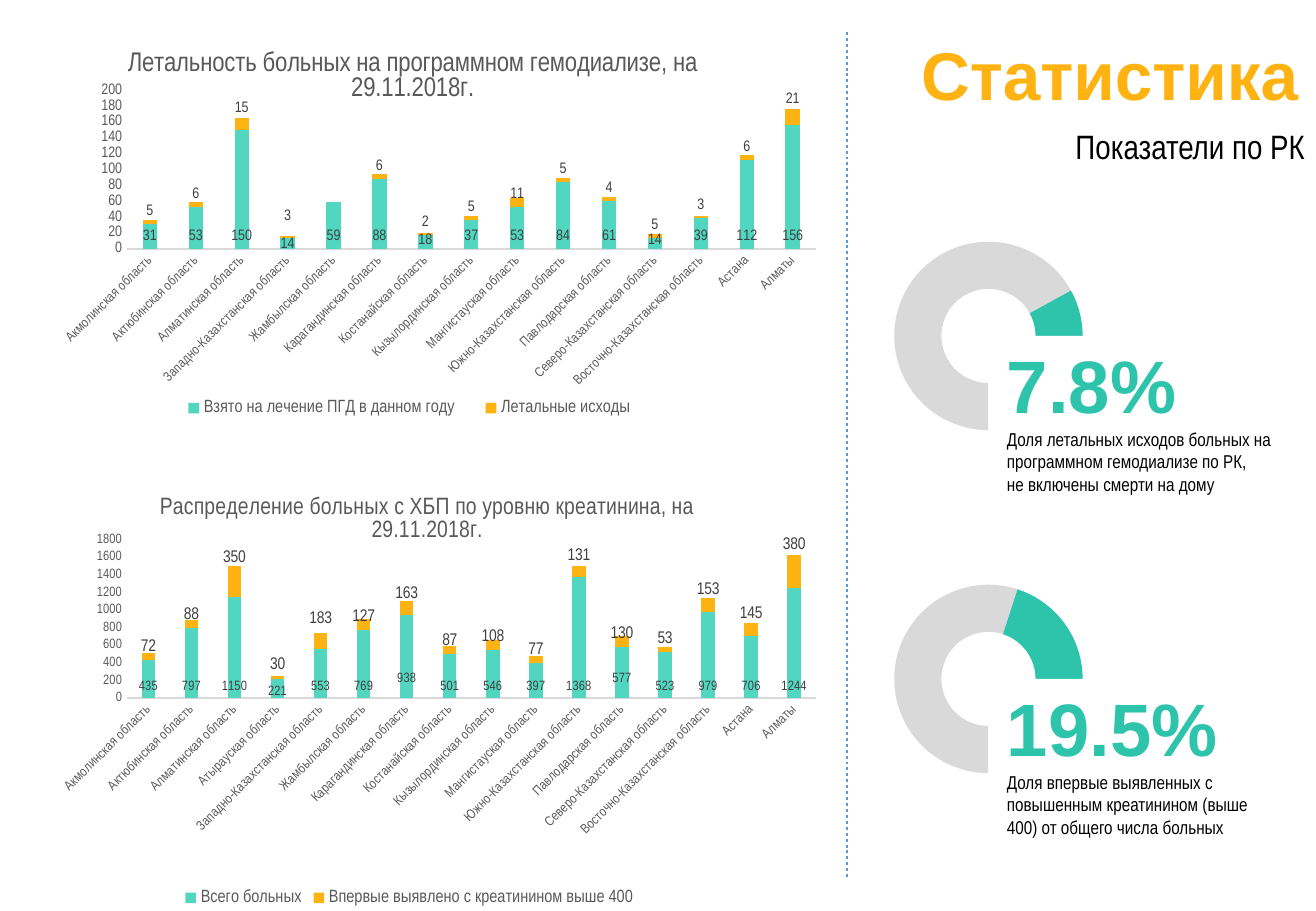
from lxml.etree import SubElement
from pptx import Presentation
from pptx.chart.data import CategoryChartData
from pptx.dml.color import RGBColor
from pptx.enum.chart import XL_CHART_TYPE, XL_LABEL_POSITION, XL_LEGEND_POSITION, XL_TICK_MARK
from pptx.enum.dml import MSO_LINE
from pptx.enum.shapes import MSO_CONNECTOR
from pptx.enum.text import PP_ALIGN
from pptx.oxml import parse_xml
from pptx.oxml.ns import nsdecls, qn
from pptx.util import Pt

PX = 7526
TEAL, MINT, AMBER, GREY = "2EC3AB", "52D6C0", "FFB312", "D9D9D9"
DARK, LABEL, BLACK, WHITE = "595959", "404040", "000000", "FFFFFF"
NARROW = "Arial Narrow"


def rgb(value):
    return RGBColor.from_string(value)


def px(*values):
    return [v * PX for v in values]


class Deck:
    def __init__(self, width, height):
        self.prs = Presentation()
        self.prs.slide_width, self.prs.slide_height = px(width, height)
        self.s = self.prs.slides.add_slide(self.prs.slide_layouts[6])

    def font(self, font, size, color=DARK, name=NARROW, bold=False):
        fmt = {"size": Pt(size), "name": name, "bold": bold}
        for key, value in fmt.items():
            setattr(font, key, value)
        font.color.rgb = rgb(color)

    def layout(self, parent, after=None, **values):
        for old in parent.findall(qn("c:layout")):
            parent.remove(old)
        layout = parse_xml(f"<c:layout {nsdecls('c')}><c:manualLayout/></c:layout>")
        for tag, value in values.items():
            SubElement(layout[0], qn(f"c:{tag}")).set("val", str(value))
        if after is None:
            parent.insert(0, layout)
        else:
            parent.find(qn(after)).addnext(layout)

    def chart(self, kind, box, cats, series):
        data = CategoryChartData()
        data.categories = cats
        for name, values in series:
            data.add_series(name, values)
        chart = self.s.shapes.add_chart(kind, *px(*box), data).chart
        chart.has_legend = chart.has_title = False
        self.font(chart.font, 10, BLACK, "Calibri")
        return chart

    def columns(self, box, title, title_at, title_size, cats, series, axis, legend=None):
        chart = self.chart(XL_CHART_TYPE.COLUMN_STACKED, box, cats,
                           [(name, values) for name, values, *_ in series])
        chart.has_title = chart.has_legend = True
        tf = chart.chart_title.text_frame
        tf.text = title
        self.font(tf.paragraphs[0].runs[0].font, title_size)
        self.layout(chart.chart_title._element, "c:tx",
                    xMode="edge", yMode="edge", x=title_at[0], y=title_at[1])

        chart.legend.position = XL_LEGEND_POSITION.BOTTOM
        chart.legend.include_in_layout = False
        self.font(chart.legend.font, 10.5)
        if legend:
            self.layout(chart.legend._element, "c:legendPos",
                        xMode="edge", yMode="edge", **legend)

        top, step, size = axis
        for ax, tick_size in ((chart.category_axis, 8), (chart.value_axis, size)):
            ax.major_tick_mark = ax.minor_tick_mark = XL_TICK_MARK.NONE
            ax.has_major_gridlines = False
            self.font(ax.tick_labels.font, tick_size)
        line = chart.category_axis.format.line
        line.color.rgb, line.width = rgb(GREY), Pt(0.75)
        turned = chart.category_axis._element.find(qn("c:txPr")).find(qn("a:bodyPr"))
        turned.set("rot", "-2700000")
        turned.set("vert", "horz")
        fmt = {"minimum_scale": 0, "maximum_scale": top, "major_unit": step}
        for key, value in fmt.items():
            setattr(chart.value_axis, key, value)
        chart.value_axis.format.line.fill.background()

        plot = chart.plots[0]
        for key, value in {"gap_width": 219, "overlap": 100, "vary_by_categories": False}.items():
            setattr(plot, key, value)
        self.layout(chart._chartSpace.chart.plotArea, layoutTarget="inner",
                    xMode="edge", yMode="edge", x=0.155, y=0.136, w=0.841, h=0.369)
        for ser, (_, _, color, label_size, shifts) in zip(plot.series, series):
            ser.format.fill.solid()
            ser.format.fill.fore_color.rgb = rgb(color)
            labels = ser.data_labels
            labels.show_value = True
            labels.position = XL_LABEL_POSITION.INSIDE_BASE
            self.font(labels.font, label_size, LABEL)
            for leader in ser._element.xpath("./c:dLbls/c:showLeaderLines"):
                leader.set("val", "0")
            for i, shift in shifts.items():
                label = ser.points[i].data_label
                self.font(label.font, label_size, LABEL)
                label.position = XL_LABEL_POSITION.INSIDE_BASE
                element = ser._element.xpath(f'.//c:dLbl[c:idx/@val="{i}"]')[0]
                self.layout(element, "c:idx", x=0, y=shift)

    def doughnut(self, box, values):
        chart = self.chart(XL_CHART_TYPE.DOUGHNUT, box, "123", [("Series 1", values)])
        plot = chart.plots[0]
        plot.vary_by_categories = True
        for tag, value in (("firstSliceAng", "180"), ("holeSize", "74")):
            plot._element.find(qn(f"c:{tag}")).set("val", value)
        for i, color in enumerate((GREY, TEAL, WHITE)):
            fmt = plot.series[0].points[i].format
            fmt.fill.solid()
            fmt.fill.fore_color.rgb = rgb(color)
            fmt.line.fill.background()

    def text(self, box, paragraphs, align=PP_ALIGN.LEFT):
        tf = self.s.shapes.add_textbox(*px(*box)).text_frame
        tf.word_wrap = True
        for i, (words, *style) in enumerate(paragraphs):
            p = tf.add_paragraph() if i else tf.paragraphs[0]
            p.alignment = align
            r = p.add_run()
            r.text = words
            self.font(r.font, *style)

    def divider(self, x, top, bottom):
        c = self.s.shapes.add_connector(MSO_CONNECTOR.STRAIGHT, *px(x, top, x, bottom))
        c.line.color.rgb = rgb("5B9BD5")
        c.line.width, c.line.dash_style = Pt(1.75), MSO_LINE.ROUND_DOT
        SubElement(c._element.spPr, qn("a:effectLst"))


def main():
    deck = Deck(1316, 911)
    regions = [f"{name} область" for name in (
        "Акмолинская", "Актюбинская", "Алматинская", "Атырауская", "Западно-Казахстанская",
        "Жамбылская", "Карагандинская", "Костанайская", "Кызылординская", "Мангистауская",
        "Южно-Казахстанская", "Павлодарская", "Северо-Казахстанская",
        "Восточно-Казахстанская")] + ["Астана", "Алматы"]
    deck.columns(
        (0, 32, 819, 430), "Летальность больных на программном гемодиализе, на 29.11.2018г.",
        (0.15, 0.03), 16, regions[:3] + regions[4:],
        [("Взято на лечение ПГД в данном году",
          (31, 53, 150, 14, 59, 88, 18, 37, 53, 84, 61, 14, 39, 112, 156),
          MINT, 9, {3: 0.02, 6: 0.01, 11: 0.01}),
         ("Летальные исходы", (5, 6, 15, 3, None, 6, 2, 5, 11, 5, 4, 5, 3, 6, 21),
          AMBER, 9, {2: -0.02, 3: -0.02, 14: -0.03})],
        (200, 20, 9), {"x": 0.2, "y": 0.84, "w": 0.6, "h": 0.07})
    deck.columns(
        (0, 481, 819, 430), "Распределение больных с ХБП по уровню креатинина, на 29.11.2018г.",
        (0.19, 0.02), 14, regions,
        [("Всего больных",
          (435, 797, 1150, 221, 553, 769, 938, 501, 546, 397, 1368, 577, 523, 979, 706, 1244),
          MINT, 8, {3: 0.01, 6: -0.02, 11: -0.02}),
         ("Впервые выявлено с креатинином выше 400",
          (72, 88, 350, 30, 183, 127, 163, 87, 108, 77, 131, 130, 53, 153, 145, 380),
          AMBER, 10, {2: -0.06, 4: -0.04, 6: -0.02, 10: -0.02, 13: -0.02, 14: -0.02, 15: -0.07})],
        (1800, 200, 8))
    deck.divider(847, 32, 878)
    shares = (
        (225, (67, 8, 25), "7.8%",
         ("Доля летальных исходов больных на программном гемодиализе по РК,",
          "не включены смерти на дому")),
        (568, (55, 20, 25), "19.5%",
         ("Доля впервые выявленных с повышенным креатинином (выше 400) от общего числа больных",)))
    for top, values, share, notes in shares:
        deck.doughnut((855, top, 267, 222), values)
        deck.text((995, top + 108, 289, 170),
                  [(share, 44, TEAL, "Arial", True)] + [(note, 11, BLACK) for note in notes])
    deck.text((855, 120, 462, 53), [("Показатели по РК", 20, BLACK)], PP_ALIGN.RIGHT)
    deck.text((819, 27, 491, 94), [("Статистика", 40, AMBER, "Arial", True)], PP_ALIGN.RIGHT)
    deck.prs.save("out.pptx")


if __name__ == "__main__":
    main()
